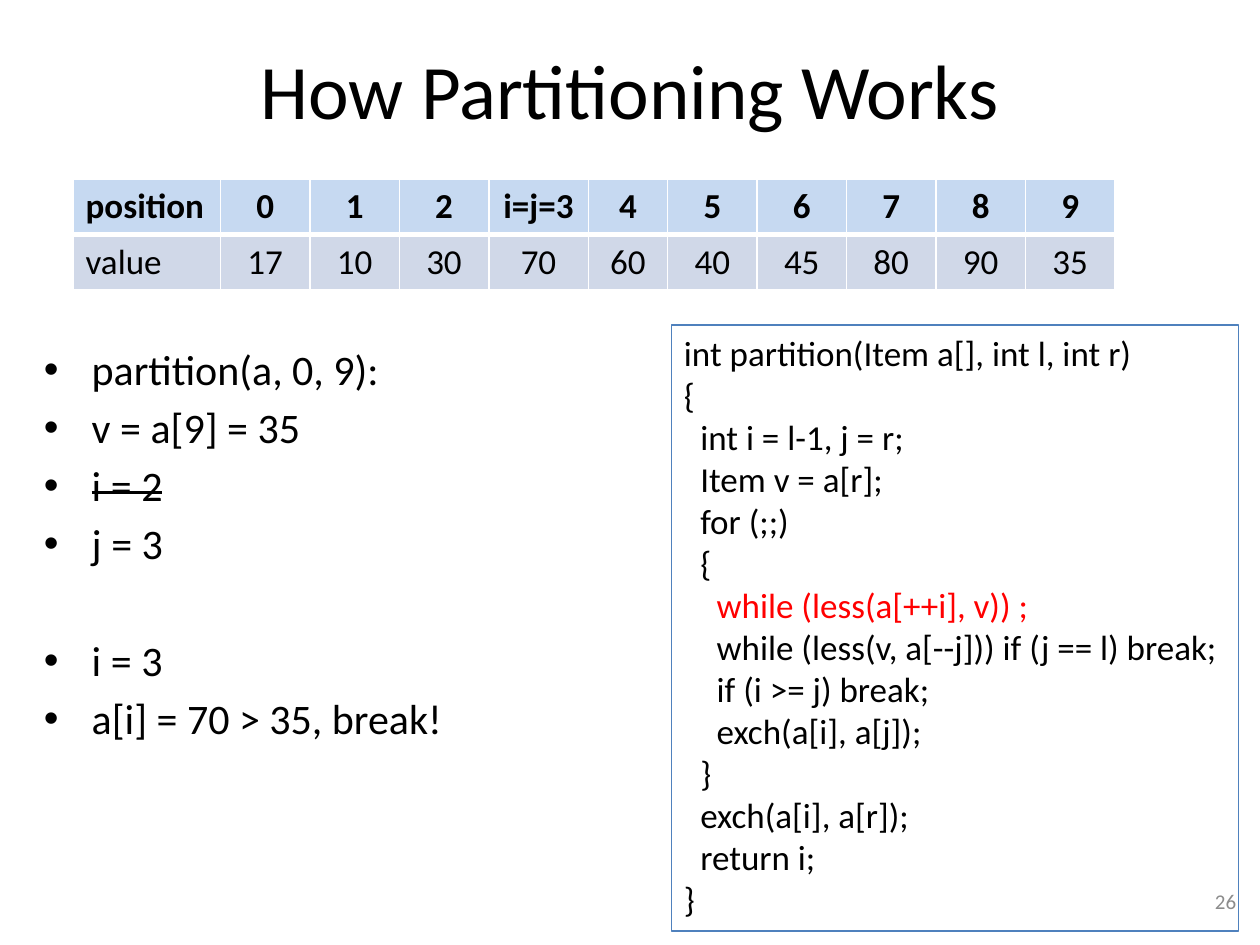
from lxml.etree import SubElement
from pptx import Presentation
from pptx.dml.color import RGBColor
from pptx.enum.shapes import MSO_SHAPE as Shape
from pptx.enum.text import MSO_ANCHOR as Anchor, PP_ALIGN as Align
from pptx.oxml.ns import qn
from pptx.util import Inches, Pt

BLACK, WHITE, RED, GREY = "000000", "FFFFFF", "FF0000", "8C8C8C"
HEADER_FILL, VALUE_FILL, CODE_LINE = "C6D9F1", "D0D8E8", "4F81BD"

POSITIONS = ["position", "0", "1", "2", "i=j=3", "4", "5", "6", "7", "8", "9"]
VALUES = ["value", "17", "10", "30", "70", "60", "40", "45", "80", "90", "35"]
COLUMN_WIDTHS = [1.17] + [0.71] * 3 + [0.79, 0.63] + [0.71] * 5

LINE_GAP = 4.3      # points between bullets
SECTION_GAP = 37.9  # points before a new group of bullets
# Each bullet: text, struck through, space before
STEPS = [
    ("partition(a, 0, 9):", False, 0),
    ("v = a[9] = 35", False, LINE_GAP),
    ("i = 2", True, LINE_GAP),
    ("j = 3", False, LINE_GAP),
    ("i = 3", False, SECTION_GAP),
    ("a[i] = 70 > 35, break!", False, LINE_GAP),
]

# Each code line: nesting level, text, colour
CODE = [
    (0, "int partition(Item a[], int l, int r)", BLACK),
    (0, "{", BLACK),
    (1, "int i = l-1, j = r;", BLACK),
    (1, "Item v = a[r];", BLACK),
    (1, "for (;;)", BLACK),
    (1, "{", BLACK),
    (2, "while (less(a[++i], v)) ;", RED),
    (2, "while (less(v, a[--j])) if (j == l) break;", BLACK),
    (2, "if (i >= j) break;", BLACK),
    (2, "exch(a[i], a[j]);", BLACK),
    (1, "}", BLACK),
    (1, "exch(a[i], a[r]);", BLACK),
    (1, "return i;", BLACK),
    (0, "}", BLACK),
]


def color(value):
    return RGBColor.from_string(value)


class SlideBuilder:
    font = "Calibri"

    def __init__(self, page):
        self.page = page

    def set_text(self, para, text, size, hue=BLACK, bold=False, align=Align.LEFT):
        para.text = text
        para.alignment = align
        for span in para.runs:
            span.font.name = self.font
            span.font.size = Pt(size)
            span.font.bold = bold
            span.font.color.rgb = color(hue)

    def paragraphs(self, frame, count):
        return [frame.paragraphs[0]] + [frame.add_paragraph() for _ in range(count - 1)]

    def indent(self, para, left, first=0):
        props = para._p.get_or_add_pPr()
        props.set("marL", str(Inches(left)))
        props.set("indent", str(Inches(first)))
        return props

    def title(self, text, left, top, width, height):
        box = self.page.shapes.title
        box.left, box.top = Inches(left), Inches(top)
        box.width, box.height = Inches(width), Inches(height)
        box.text_frame.vertical_anchor = Anchor.MIDDLE
        self.set_text(box.text_frame.paragraphs[0], text, 44, align=Align.CENTER)

    def text_box(self, left, top, width, height, anchor=Anchor.TOP):
        box = self.page.shapes.add_textbox(
            Inches(left), Inches(top), Inches(width), Inches(height))
        box.text_frame.word_wrap = True
        box.text_frame.vertical_anchor = anchor
        return box.text_frame

    def bullets(self, steps, left, top, width, height):
        frame = self.text_box(left, top, width, height)
        for para, (text, struck, gap) in zip(self.paragraphs(frame, len(steps)), steps):
            self.set_text(para, text, 24)
            para.space_before = Pt(gap)
            props = self.indent(para, 0.38, -0.38)
            SubElement(props, qn("a:buFont")).set("typeface", "Arial")
            SubElement(props, qn("a:buChar")).set("char", "•")
            if struck:
                para.runs[0]._r.get_or_add_rPr().set("strike", "sngStrike")

    def page_number(self, text, left, top, width, height):
        frame = self.text_box(left, top, width, height, Anchor.MIDDLE)
        self.set_text(frame.paragraphs[0], text, 12, GREY, align=Align.RIGHT)

    def borders(self, cell, widths):
        props = cell._tc.get_or_add_tcPr()
        for index, (side, points) in enumerate(widths.items()):
            line = props.makeelement(qn("a:ln" + side), {"w": str(Pt(points))})
            fill = SubElement(line, qn("a:solidFill"))
            SubElement(fill, qn("a:srgbClr")).set("val", WHITE)
            props.insert(index, line)

    def table(self, rows, widths, left, top, row_height):
        table = self.page.shapes.add_table(
            len(rows), len(widths), Inches(left), Inches(top),
            Inches(sum(widths)), Inches(row_height * len(rows))).table
        for column, width in zip(table.columns, widths):
            column.width = Inches(width)
        for r, texts in enumerate(rows):
            header = r == 0
            for c, text in enumerate(texts):
                cell = table.cell(r, c)
                cell.fill.solid()
                cell.fill.fore_color.rgb = color(HEADER_FILL if header else VALUE_FILL)
                self.set_text(cell.text_frame.paragraphs[0], text, 20, bold=header,
                              align=Align.CENTER if c else Align.LEFT)
                self.borders(cell, {"L": 1, "R": 1, "T": 1 if header else 3,
                                    "B": 3 if header else 1})

    def code(self, lines, left, top, width, height):
        box = self.page.shapes.add_shape(
            Shape.RECTANGLE, Inches(left), Inches(top), Inches(width), Inches(height))
        box.shadow.inherit = False
        box.fill.background()
        box.line.color.rgb = color(CODE_LINE)
        box.line.width = Pt(0.75)
        frame = box.text_frame
        frame.word_wrap = True
        frame.vertical_anchor = Anchor.TOP
        for para, (level, text, hue) in zip(self.paragraphs(frame, len(lines)), lines):
            self.set_text(para, text, 20, hue)
            self.indent(para, 0.13 * level)


def main():
    deck = Presentation()
    deck.slide_width, deck.slide_height = Inches(10), Inches(7.5)
    slide = SlideBuilder(deck.slides.add_slide(deck.slide_layouts[5]))

    # Title, steps and page number
    slide.title("How Partitioning Works", 0.5, 0.08, 9, 1.25)
    slide.bullets(STEPS, 0.25, 2.68, 5, 4.32)
    slide.page_number("26", 7.58, 6.95, 2.33, 0.4)

    # Array being partitioned
    slide.table([POSITIONS, VALUES], COLUMN_WIDTHS, 0.58, 1.42, 0.44)

    # Source code
    slide.code(CODE, 5.33, 2.58, 4.5, 4.81)

    deck.save("out.pptx")


if __name__ == "__main__":
    main()
